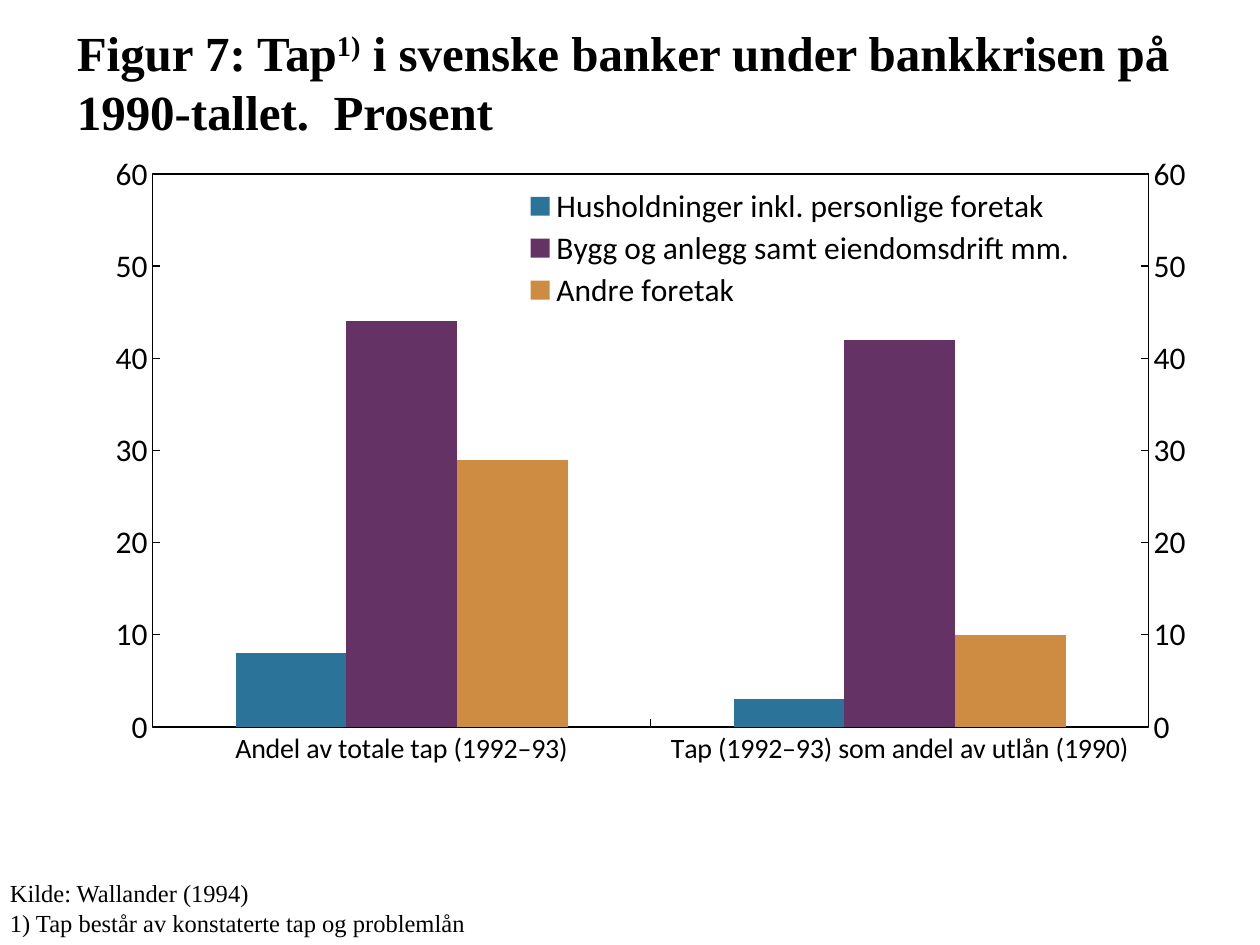
from copy import deepcopy
from dataclasses import dataclass

from lxml import etree
from pptx import Presentation
from pptx.chart.data import CategoryChartData
from pptx.dml.color import RGBColor as Color
from pptx.enum.chart import XL_CHART_TYPE as ChartType
from pptx.enum.chart import XL_LEGEND_POSITION as LegendPosition
from pptx.enum.chart import XL_TICK_MARK as TickMark
from pptx.enum.text import MSO_ANCHOR as Anchor
from pptx.enum.text import MSO_AUTO_SIZE as AutoSize
from pptx.enum.text import PP_ALIGN as Align
from pptx.oxml import parse_xml
from pptx.oxml.ns import nsdecls, qn
from pptx.util import Pt


@dataclass(frozen=True)
class Theme:
    ink: Color = Color(0, 0, 0)
    bars: tuple = ("2C7399", "643264", "CD8C41")
    text_font: str = "Times New Roman"
    chart_font: str = "Calibri"
    title_size: int = 28
    note_size: int = 14
    chart_size: int = 18
    category_size: int = 16
    line_width: float = 0.75


theme = Theme()
chart_width, chart_height = Pt(629.28), Pt(368.64)


def write(para, text, size, bold=False, raised=False):
    """Add a span of text to a paragraph, optionally as superscript."""
    span = para.add_run()
    span.text = text
    font = span.font
    font.name, font.size, font.bold = theme.text_font, Pt(size), bold
    font.color.rgb = theme.ink
    if raised:
        font._element.set("baseline", "30000")


def manual_layout(left, top, width, height, target=""):
    """Return a chart layout element for a box given as lengths."""
    return parse_xml(
        f'<c:layout {nsdecls("c")}><c:manualLayout>{target}'
        '<c:xMode val="edge"/><c:yMode val="edge"/>'
        f'<c:x val="{left / chart_width}"/><c:y val="{top / chart_height}"/>'
        f'<c:w val="{width / chart_width}"/><c:h val="{height / chart_height}"/>'
        '</c:manualLayout></c:layout>')


deck = Presentation()
deck.slide_width, deck.slide_height = Pt(720), Pt(540)
page = deck.slides.add_slide(deck.slide_layouts[5])

# Title
title = page.shapes.title
title.left, title.top, title.width, title.height = Pt(36.72), Pt(1.44), Pt(648), Pt(90)
title.text_frame.word_wrap = True
title.text_frame.auto_size = AutoSize.NONE
title.text_frame.vertical_anchor = Anchor.MIDDLE
para = title.text_frame.paragraphs[0]
para.alignment = Align.LEFT
write(para, "Figur 7: Tap", theme.title_size, bold=True)
write(para, "1)", theme.title_size, bold=True, raised=True)
write(para, " i svenske banker under bankkrisen på ", theme.title_size, bold=True)
para.add_line_break()
write(para, "1990-tallet.  Prosent", theme.title_size, bold=True)

# Chart: three column series, and a lineless series that carries the right axis
data = CategoryChartData()
data.categories = ["Andel av totale tap (1992–93)", "Tap (1992–93) som andel av utlån (1990)"]
data.add_series("Husholdninger inkl. personlige foretak", (8, 3))
data.add_series("Bygg og anlegg samt eiendomsdrift mm.", (44, 42))
data.add_series("Andre foretak", (29, 10))
data.add_series("Series 4", (2, 2))
chart = page.shapes.add_chart(
    ChartType.COLUMN_CLUSTERED, Pt(48.24), Pt(82.8), chart_width, chart_height, data).chart
chart.has_title = False
chart.font.name, chart.font.size = theme.chart_font, Pt(theme.chart_size)
chart.font.color.rgb = theme.ink

columns = chart.plots[0]
columns.gap_width, columns.overlap = 150, 0
columns.vary_by_categories = False
*column_series, right_series = columns.series
for series, color in zip(column_series, theme.bars):
    series.format.fill.solid()
    series.format.fill.fore_color.rgb = Color.from_string(color)
right_series.format.line.fill.background()

for axis in (chart.category_axis, chart.value_axis):
    axis.has_major_gridlines = False
    axis.major_tick_mark, axis.minor_tick_mark = TickMark.INSIDE, TickMark.NONE
    axis.format.line.color.rgb = theme.ink
    axis.format.line.width = Pt(theme.line_width)
chart.category_axis.tick_labels.font.size = Pt(theme.category_size)
value_axis = chart.value_axis
value_axis.minimum_scale, value_axis.maximum_scale, value_axis.major_unit = 0, 60, 10

# Right axis
plot_area = chart._chartSpace.chart.plotArea
bar_group = plot_area.find(qn("c:barChart"))
left_axes = [plot_area.find(qn("c:catAx")), plot_area.find(qn("c:valAx"))]
line_group = parse_xml(
    f'<c:lineChart {nsdecls("c")}><c:grouping val="standard"/><c:varyColors val="0"/>'
    '<c:marker val="1"/><c:axId val="5001"/><c:axId val="5002"/></c:lineChart>')
line = right_series.format.line and right_series._element
for flag in line.findall(qn("c:invertIfNegative")):
    line.remove(flag)
marker = etree.Element(qn("c:marker"))
etree.SubElement(marker, qn("c:symbol")).set("val", "none")
line.find(qn("c:spPr")).addnext(marker)
etree.SubElement(line, qn("c:smooth")).set("val", "0")
line_group.insert(2, line)
bar_group.addnext(line_group)

right_axes = [deepcopy(axis) for axis in left_axes]
settings = (
    {"axId": "5001", "crossAx": "5002", "delete": "1"},
    {"axId": "5002", "crossAx": "5001", "axPos": "r", "crosses": "max"},
)
for axis, values in zip(right_axes, settings):
    for tag, value in values.items():
        axis.find(qn(f"c:{tag}")).set("val", value)
left_axes[1].addnext(right_axes[0])
right_axes[0].addnext(right_axes[1])

# Plot frame and legend
right_axes[1].addnext(parse_xml(
    f'<c:spPr {nsdecls("c", "a")}><a:noFill/><a:ln w="{Pt(theme.line_width)}"><a:solidFill>'
    f'<a:srgbClr val="{theme.ink}"/></a:solidFill></a:ln></c:spPr>'))
chart.has_legend = True
chart.legend.position = LegendPosition.RIGHT
chart.legend.include_in_layout = False
legend = chart.legend._element
for part in (plot_area, legend):
    for layout in part.findall(qn("c:layout")):
        part.remove(layout)
plot_area.insert(0, manual_layout(
    Pt(39), Pt(16.6), Pt(570), Pt(316), '<c:layoutTarget val="inner"/>'))
entry = parse_xml(
    f'<c:legendEntry {nsdecls("c")}><c:idx val="3"/><c:delete val="1"/></c:legendEntry>')
legend.insert(0, entry)
for position in legend.findall(qn("c:legendPos")):
    legend.insert(0, position)
entry.addnext(manual_layout(Pt(252), Pt(22), Pt(315), Pt(74)))

# Source and footnote
note = page.shapes.add_textbox(Pt(-1.44), Pt(498.24), Pt(595.44), Pt(41.04)).text_frame
note.word_wrap = True
note.auto_size = AutoSize.SHAPE_TO_FIT_TEXT
write(note.paragraphs[0], "Kilde: Wallander (1994)", theme.note_size)
write(note.add_paragraph(), "1) Tap består av konstaterte tap og problemlån", theme.note_size)

deck.save("out.pptx")
